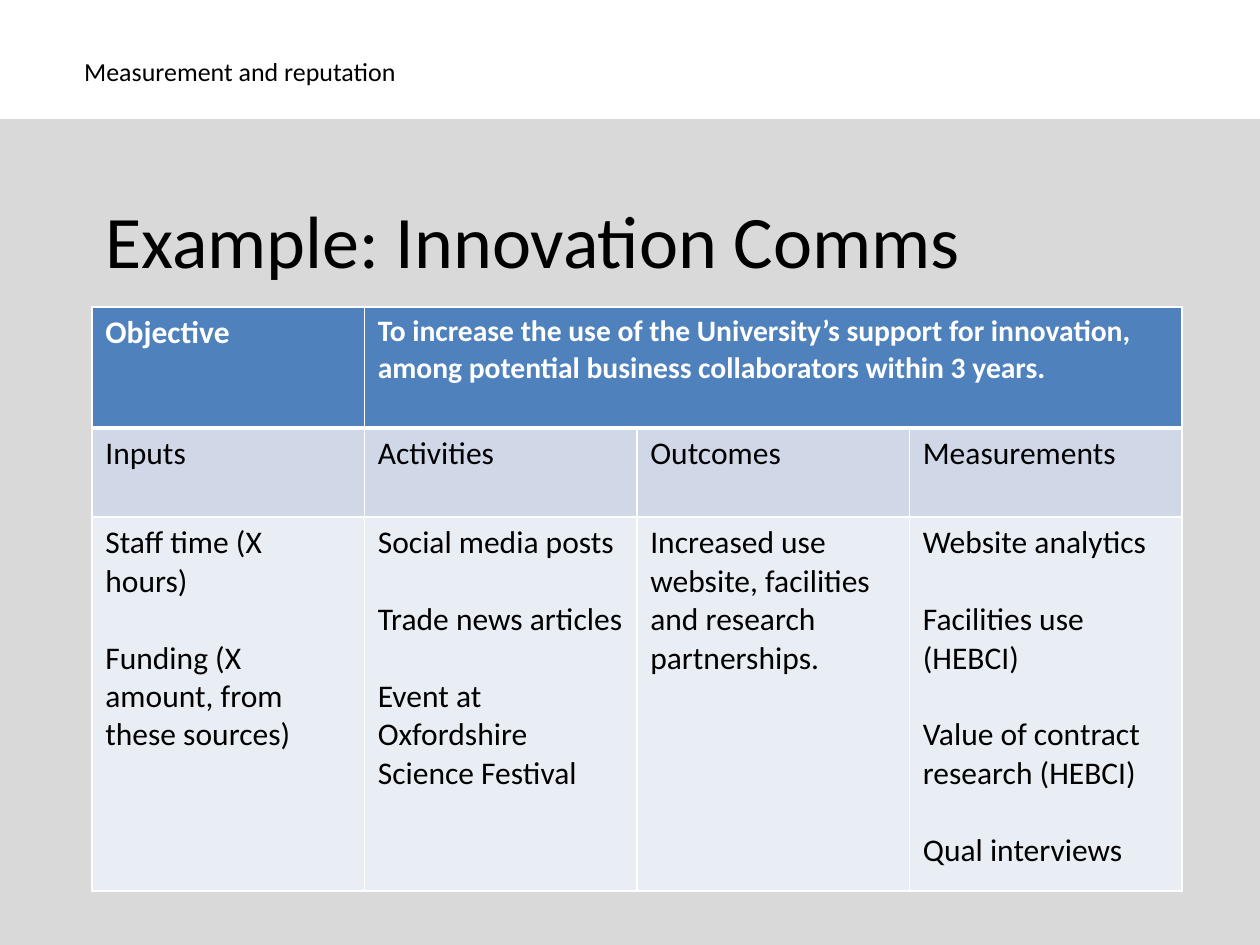
from lxml.etree import SubElement
from pptx import Presentation
from pptx.dml.color import RGBColor
from pptx.enum.shapes import MSO_SHAPE
from pptx.oxml.ns import qn
from pptx.util import Pt

PX = 6858
FONT = "Calibri"
BLACK = RGBColor(0x00, 0x00, 0x00)
WHITE = RGBColor(0xFF, 0xFF, 0xFF)
GREY = RGBColor(0xD9, 0xD9, 0xD9)
BLUE = RGBColor(0x4F, 0x81, 0xBD)
BAND_DARK = RGBColor(0xD0, 0xD8, 0xE8)
BAND_LIGHT = RGBColor(0xE9, 0xED, 0xF4)

BODY_SIZE = 17
ITEM_GAP = 20.75
ROW_HEIGHTS = [121, 89, 374]
ROW_FILLS = [BLUE, BAND_DARK, BAND_LIGHT]
ROWS = [
    [["Objective"],
     ["To increase the use of the University’s support for innovation, "
      "among potential business collaborators within 3 years."]],
    [["Inputs"], ["Activities"], ["Outcomes"], ["Measurements"]],
    [["Staff time (X hours)", "Funding (X amount, from these sources)"],
     ["Social media posts", "Trade news articles",
      "Event at Oxfordshire Science Festival"],
     ["Increased use website, facilities and research partnerships."],
     ["Website analytics", "Facilities use (HEBCI)",
      "Value of contract research (HEBCI)", "Qual interviews"]],
]


def write(frame, lines, size, color=BLACK, bold=False):
    """Fill a text frame with one paragraph per line, an empty line's height apart."""
    frame.word_wrap = True
    for index, line in enumerate(lines):
        para = frame.add_paragraph() if index else frame.paragraphs[0]
        if index:
            para.space_before = Pt(ITEM_GAP)
        span = para.add_run()
        span.text = line
        span.font.name = FONT
        span.font.size = Pt(size)
        span.font.bold = bold
        span.font.color.rgb = color


def add_borders(cell, widths):
    """Draw white cell borders; widths are points for left, right, top, bottom."""
    properties = cell._tc.get_or_add_tcPr()
    for side, width in zip("LRTB", widths):
        line = SubElement(properties, qn(f"a:ln{side}"), w=str(Pt(width)))
        fill = SubElement(line, qn("a:solidFill"))
        SubElement(fill, qn("a:srgbClr"), val=str(WHITE))


deck = Presentation()
deck.slide_width, deck.slide_height = 1260 * PX, 945 * PX
page = deck.slides.add_slide(deck.slide_layouts[6])

section = page.shapes.add_textbox(71 * PX, 49 * PX, 735 * PX, 45 * PX)
write(section.text_frame, ["Measurement and reputation"], 14)

panel = page.shapes.add_shape(MSO_SHAPE.RECTANGLE, 0, 119 * PX, 1260 * PX, 826 * PX)
panel.shadow.inherit = False
panel.fill.solid()
panel.fill.fore_color.rgb = GREY
panel.line.fill.background()

title = page.shapes.add_textbox(92 * PX, 188 * PX, 1090 * PX, 103 * PX)
write(title.text_frame, ["Example: Innovation Comms"], 40)

table = page.shapes.add_table(
    3, 4, 92 * PX, 307 * PX, 1090 * PX, sum(ROW_HEIGHTS) * PX).table
table.cell(0, 1).merge(table.cell(0, 3))
for row_index, height in enumerate(ROW_HEIGHTS):
    table.rows[row_index].height = height * PX
    top = 3 if row_index == 1 else 1
    bottom = 3 if row_index == 0 else 1
    for cell in table.rows[row_index].cells:
        add_borders(cell, (1, 1, top, bottom))
        cell.fill.solid()
        cell.fill.fore_color.rgb = ROW_FILLS[row_index]
    for column_index, lines in enumerate(ROWS[row_index]):
        header = row_index == 0
        size = 16 if header and column_index == 1 else BODY_SIZE
        write(table.cell(row_index, column_index).text_frame, lines, size,
              WHITE if header else BLACK, header)

deck.save("out.pptx")
